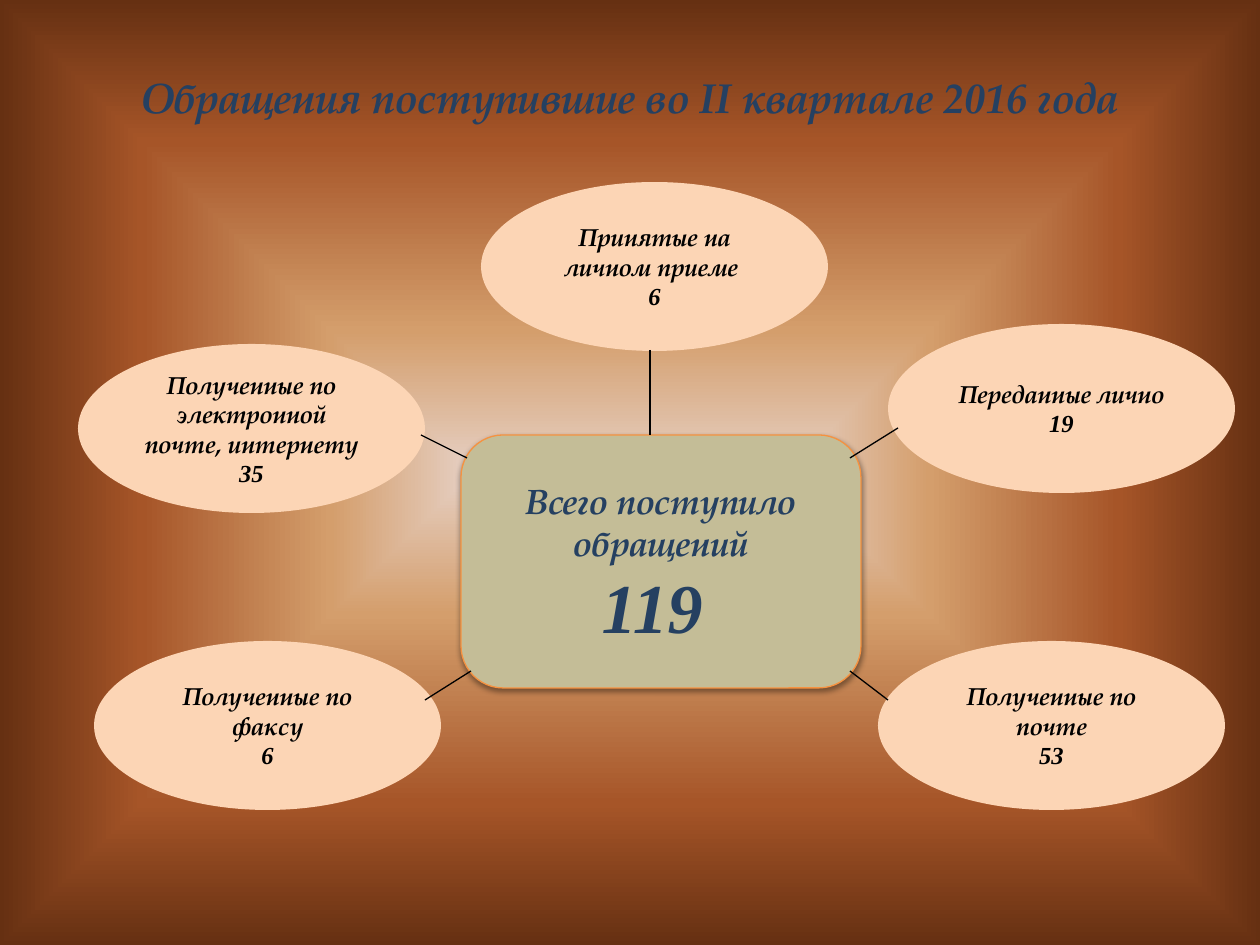
import pptx
import pptx.util
import pptx.oxml
import pptx.oxml.ns
import pptx.dml.color
import pptx.enum.shapes
import pptx.enum.text

EMU_PER_PX = 914400 / 126
TEXT_FONT = "TeX Gyre Pagella"
NUMBER_FONT = "Times New Roman"
COLORS = {
    "heading": "254061",
    "total": "C4BD97",
    "total_border": "F69240",
    "source": "FCD5B5",
    "ink": "000000",
}
BACKGROUND_STOPS = [(0, "E6D0C4"), (30, "D49E6C"), (70, "A65528"), (100, "663012")]
ELLIPSE_SIZE = (347, 169)
SOURCES = [
    (481, 182, "Принятые на личном приеме ", "6"),
    (888, 324, "Переданные лично", "19"),
    (878, 641, "Полученные по почте", "53"),
    (94, 641, "Полученные по факсу", "6"),
    (78, 344, "Полученные по электронной почте, интернету", "35"),
]
LINES = [
    (650, 350, 650, 435),
    (850, 458, 898, 428),
    (850, 671, 888, 700),
    (425, 700, 471, 671),
    (421, 435, 467, 458),
]


def px(length):
    return pptx.util.Emu(round(length * EMU_PER_PX))


def rgb(name):
    return pptx.dml.color.RGBColor.from_string(COLORS[name])


def set_background(slide):
    stops = "".join(
        f'<a:gs pos="{position * 1000}"><a:srgbClr val="{color}"/></a:gs>'
        for position, color in BACKGROUND_STOPS
    )
    background = pptx.oxml.parse_xml(
        f'<p:bg {pptx.oxml.ns.nsdecls("p", "a")}><p:bgPr><a:gradFill rotWithShape="1">'
        f'<a:gsLst>{stops}</a:gsLst><a:path path="rect">'
        '<a:fillToRect l="50000" t="50000" r="50000" b="50000"/></a:path>'
        '</a:gradFill><a:effectLst/></p:bgPr></p:bg>'
    )
    slide.element.cSld.insert(0, background)


def write_text(shape, lines, color):
    text_frame = shape.text_frame
    text_frame.word_wrap = True
    text_frame.vertical_anchor = pptx.enum.text.MSO_ANCHOR.MIDDLE
    text_frame.text = "\n".join(text for text, size, font in lines)
    for paragraph, (text, size, font) in zip(text_frame.paragraphs, lines):
        paragraph.alignment = pptx.enum.text.PP_ALIGN.CENTER
        run_font = paragraph.runs[0].font
        run_font.name = font
        run_font.size = pptx.util.Pt(size)
        run_font.bold = True
        run_font.italic = True
        run_font.color.rgb = rgb(color)


def add_title(slide):
    title = slide.shapes.title
    title.left, title.top, title.width, title.height = map(px, (63, 38, 1134, 117))
    write_text(
        title,
        [("Обращения поступившие во II квартале 2016 года", 24, TEXT_FONT)],
        "heading",
    )


def add_filled_shape(slide, kind, box, fill):
    shape = slide.shapes.add_shape(kind, *map(px, box))
    shape.shadow.inherit = False
    shape.fill.solid()
    shape.fill.fore_color.rgb = rgb(fill)
    shape.line.fill.background()
    return shape


def add_total(slide):
    kind = pptx.enum.shapes.MSO_SHAPE.ROUNDED_RECTANGLE
    shape = add_filled_shape(slide, kind, (461, 435, 400, 253), "total")
    shape.line.color.rgb = rgb("total_border")
    shape.line.width = pptx.util.Pt(0.75)
    shape.text_frame.margin_top = px(11)
    write_text(
        shape,
        [("Всего поступило обращений", 20, TEXT_FONT), ("119 ", 40, NUMBER_FONT)],
        "heading",
    )
    effects = shape.element.spPr.find(pptx.oxml.ns.qn("a:effectLst"))
    effects.append(pptx.oxml.parse_xml(
        f'<a:outerShdw {pptx.oxml.ns.nsdecls("a")} blurRad="{pptx.util.Pt(3.1)}" '
        f'dist="{pptx.util.Pt(1.6)}" dir="5400000" rotWithShape="0">'
        f'<a:srgbClr val="{COLORS["ink"]}"><a:alpha val="38000"/></a:srgbClr>'
        '</a:outerShdw>'
    ))


def add_source(slide, left, top, label, count):
    kind = pptx.enum.shapes.MSO_SHAPE.OVAL
    shape = add_filled_shape(slide, kind, (left, top, *ELLIPSE_SIZE), "source")
    write_text(shape, [(label, 14, TEXT_FONT), (count, 14, NUMBER_FONT)], "ink")


def add_line(slide, ends):
    connector = slide.shapes.add_connector(
        pptx.enum.shapes.MSO_CONNECTOR.STRAIGHT, *map(px, ends)
    )
    connector.line.color.rgb = rgb("ink")
    connector.line.width = pptx.util.Pt(0.75)
    connector.element.spPr.append(
        pptx.oxml.parse_xml(f'<a:effectLst {pptx.oxml.ns.nsdecls("a")}/>')
    )


def main():
    presentation = pptx.Presentation()
    presentation.slide_width = px(1260)
    presentation.slide_height = px(945)
    slide = presentation.slides.add_slide(presentation.slide_layouts[5])
    set_background(slide)
    add_title(slide)
    add_total(slide)
    for source in SOURCES:
        add_source(slide, *source)
    for ends in LINES:
        add_line(slide, ends)
    presentation.save("out.pptx")


if __name__ == "__main__":
    main()
